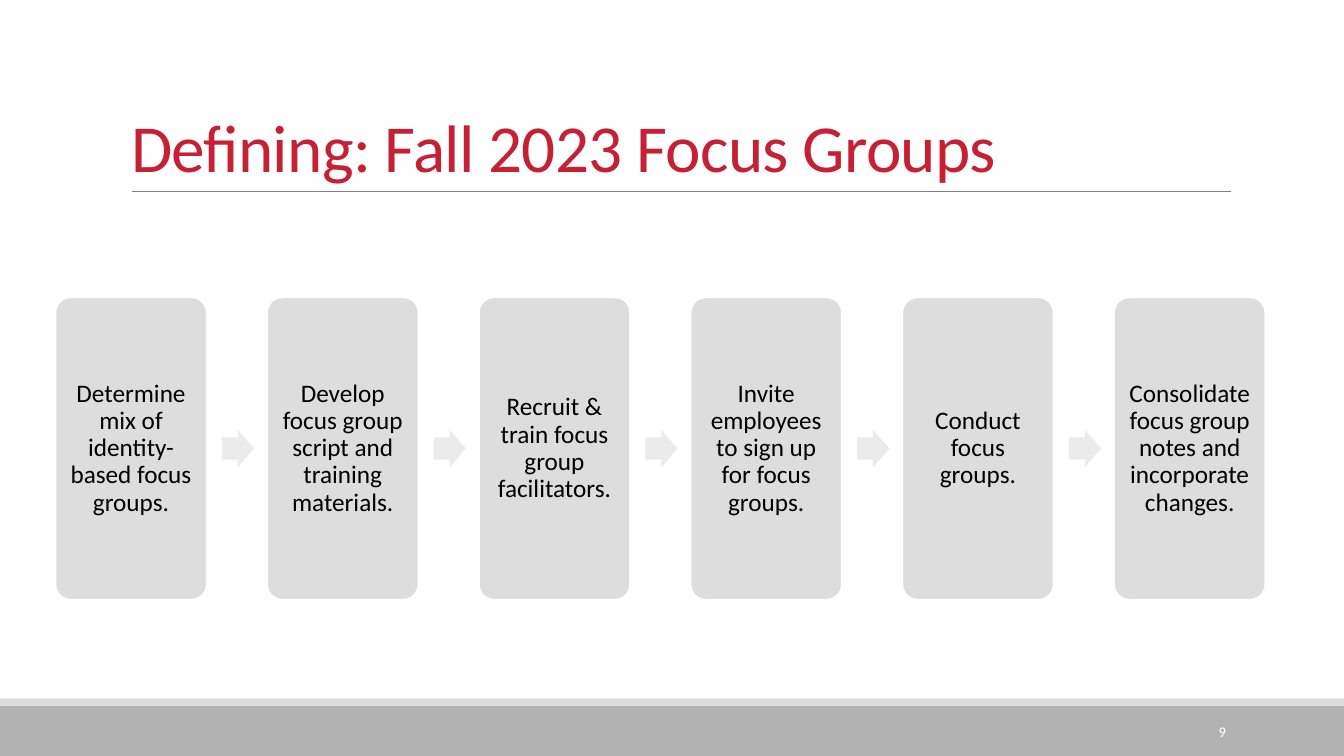
import pptx
import pptx.util
import pptx.dml.color
import pptx.enum.shapes
import pptx.enum.text
import pptx.oxml

SHAPE = pptx.enum.shapes.MSO_SHAPE
ALIGN = pptx.enum.text.PP_ALIGN
ANCHOR = pptx.enum.text.MSO_ANCHOR
inch = pptx.util.Inches

W, H = 13.33, 7.5
STEP_LEFT, STEP_TOP, STEP_PITCH = 0.55, 2.95, 2.1
STEP_W, STEP_H = 1.5, 3
ARROW_W, ARROW_H, ARROW_GAP = 0.32, 0.37, 0.15
STEPS = [
    "Determine mix of identity-based focus groups.",
    "Develop focus group script and training materials.",
    "Recruit & train focus group facilitators.",
    "Invite employees to sign up for focus groups.",
    "Conduct focus groups.",
    "Consolidate focus group notes and incorporate changes.",
]


def color(value):
    return pptx.dml.color.RGBColor.from_string(value)


def write(sp, text, size=18, fill="000000", align=ALIGN.CENTER,
          anchor=ANCHOR.MIDDLE, spacing=1.0, insets=(0.1, 0.05), tracking=None):
    tf = sp.text_frame
    tf.word_wrap = True
    tf.auto_size = pptx.enum.text.MSO_AUTO_SIZE.NONE
    tf.vertical_anchor = anchor
    tf.margin_left = tf.margin_right = inch(insets[0])
    tf.margin_top = tf.margin_bottom = inch(insets[1])
    p = tf.paragraphs[0]
    p.alignment = align
    p.line_spacing = spacing
    r = p.add_run()
    r.text = text
    r.font.name = "Calibri"
    r.font.size = pptx.util.Pt(size)
    r.font.color.rgb = color(fill)
    if tracking is not None:
        r.font._element.set("spc", str(tracking))


def add_block(s, kind, x, y, w, h, fill, line=None, adjustments=()):
    sp = s.shapes.add_shape(kind, inch(x), inch(y), inch(w), inch(h))
    sp.shadow.inherit = False
    sp.fill.solid()
    sp.fill.fore_color.rgb = color(fill)
    if line:
        sp.line.color.rgb = color(line)
        sp.line.width = pptx.util.Pt(1.25)
    else:
        sp.line.fill.background()
    for i, value in enumerate(adjustments):
        sp.adjustments[i] = value
    return sp


def add_rule(s, x1, x2, y):
    ln = s.shapes.add_connector(pptx.enum.shapes.MSO_CONNECTOR.STRAIGHT,
                                inch(x1), inch(y), inch(x2), inch(y))
    ln.line.color.rgb = color("808080")
    ln.line.width = pptx.util.Pt(0.5)
    ln._element.spPr.append(pptx.oxml.parse_xml(
        '<a:effectLst xmlns:a="http://schemas.openxmlformats.org/drawingml/2006/main"/>'))


def add_title(s, text):
    sp = s.shapes.title
    sp.left, sp.top, sp.width, sp.height = map(inch, (1.2, 0.31, 11, 1.59))
    write(sp, text, size=48, fill="C52033", align=ALIGN.LEFT,
          anchor=ANCHOR.BOTTOM, spacing=0.85, tracking=-50)


def add_footer(s, number):
    add_block(s, SHAPE.RECTANGLE, 0, H - 0.5, W, 0.5, "B2B2B2")
    add_block(s, SHAPE.RECTANGLE, 0, H - 0.57, W, 0.07, "DDDDDD")
    sp = s.shapes.add_textbox(inch(10.83), inch(7.06), inch(1.43), inch(0.4))
    write(sp, number, size=10.5, fill="FFFFFF", align=ALIGN.RIGHT)


def add_step(s, column, text):
    x = STEP_LEFT + column * STEP_PITCH
    sp = add_block(s, SHAPE.ROUNDED_RECTANGLE, x, STEP_TOP, STEP_W, STEP_H,
                   "DDDDDD", line="FFFFFF", adjustments=(0.1,))
    write(sp, text, spacing=0.9, insets=(0.07, 0.07))


def add_arrow(s, column):
    x = STEP_LEFT + column * STEP_PITCH + STEP_W + ARROW_GAP
    y = STEP_TOP + (STEP_H - ARROW_H) / 2
    add_block(s, SHAPE.RIGHT_ARROW, x, y, ARROW_W, ARROW_H, "EBEBEB",
              adjustments=(0.6, 0.5))


def main():
    prs = pptx.Presentation()
    prs.slide_width, prs.slide_height = inch(W), inch(H)
    s = prs.slides.add_slide(prs.slide_layouts.get_by_name("Title Only"))
    add_footer(s, "9")
    add_rule(s, 1.31, 12.21, 1.9)
    add_title(s, "Defining: Fall 2023 Focus Groups")
    for column, text in enumerate(STEPS):
        add_step(s, column, text)
        if column < len(STEPS) - 1:
            add_arrow(s, column)
    prs.save("out.pptx")


if __name__ == "__main__":
    main()
